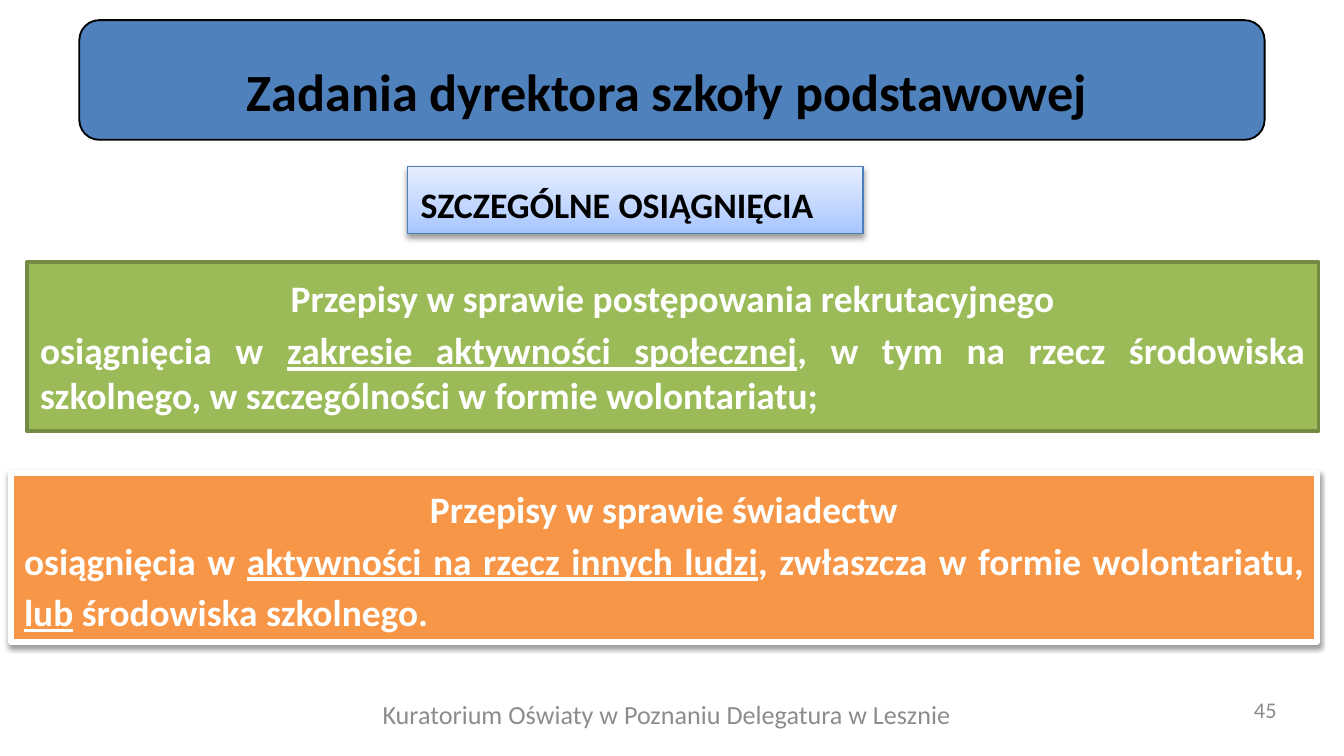
from dataclasses import dataclass

from lxml.etree import SubElement as Sub
from pptx import Presentation
from pptx.dml.color import RGBColor as Rgb
from pptx.enum.shapes import MSO_SHAPE as Form
from pptx.enum.text import MSO_ANCHOR as Anchor, PP_ALIGN as Align
from pptx.oxml.ns import qn
from pptx.util import Pt


@dataclass(frozen=True)
class Theme:
    font: str = "Calibri"
    black: str = "000000"
    white: str = "FFFFFF"
    gray: str = "8C8C8C"
    blue: str = "4F81BD"
    edge: str = "4B7EBC"
    green: str = "9BBB59"
    olive: str = "738A42"
    orange: str = "F79646"
    fade: tuple = ((0, "A4C4FF"), (35, "BFD4FF"), (100, "E6EEFF"))
    title: int = 28
    label: int = 24
    body: int = 20
    foot: int = 14
    page: int = 12


def apply(target, values):
    for name, value in values.items():
        setattr(target, name, value)


class Deck:
    def __init__(self, theme, width, height):
        self.theme = theme
        self.file = Presentation()
        apply(self.file, {"slide_width": Pt(width), "slide_height": Pt(height)})
        self.slide = self.file.slides.add_slide(self.file.slide_layouts[6])

    def box(self, area, fill, line, weight, form=Form.RECTANGLE, shade=False):
        shape = self.slide.shapes.add_shape(form, *map(Pt, area))
        shape.shadow.inherit = False
        if isinstance(fill, tuple):
            self.fade(shape, fill)
        else:
            shape.fill.solid()
            shape.fill.fore_color.rgb = Rgb.from_string(fill)
        shape.line.color.rgb = Rgb.from_string(line)
        shape.line.width = Pt(weight)
        if shade:
            self.shade(shape)
        return shape

    def fade(self, shape, stops):
        shape.fill.gradient()
        shape.fill.gradient_angle = 90
        group = shape._element.spPr.find(qn("a:gradFill")).find(qn("a:gsLst"))
        for stop in list(group):
            group.remove(stop)
        for place, color in stops:
            stop = Sub(group, qn("a:gs"), pos=str(place * 1000))
            Sub(stop, qn("a:srgbClr"), val=color)

    def shade(self, shape):
        effect = shape._element.spPr.find(qn("a:effectLst"))
        cast = Sub(effect, qn("a:outerShdw"), blurRad=str(Pt(3.1)),
                   dist=str(Pt(1.6)), dir="5400000", rotWithShape="0")
        color = Sub(cast, qn("a:srgbClr"), val=self.theme.black)
        Sub(color, qn("a:alpha"), val="38000")

    def text(self, area, *lines, **style):
        shape = self.slide.shapes.add_textbox(*map(Pt, area))
        self.label(shape, *lines, **style)

    def label(self, shape, *lines, size, color, bold=False, small=False,
              anchor=Anchor.TOP):
        frame = shape.text_frame
        apply(frame, {"word_wrap": True, "vertical_anchor": anchor})
        look = {"name": self.theme.font, "size": Pt(size), "bold": bold}
        for index, (runs, form) in enumerate(lines):
            para = frame.add_paragraph() if index else frame.paragraphs[0]
            apply(para, form)
            for order, words in enumerate(runs):
                run = para.add_run()
                run.text = words
                apply(run.font, look | {"underline": order % 2 == 1})
                run.font.color.rgb = Rgb.from_string(color)
                if small:
                    run.font._element.set("cap", "small")


def main():
    theme = Theme()
    deck = Deck(theme, 720, 405)
    mid = {"alignment": Align.CENTER}
    full = {"alignment": Align.JUSTIFY}
    wide = {"line_spacing": 1.15}
    gap = {"space_before": Pt(4)}
    strong = {"size": theme.body, "color": theme.white, "bold": True}
    faint = {"color": theme.gray, "anchor": Anchor.MIDDLE}

    rules = deck.box((14.4, 140.4, 691.9, 90.7), theme.green, theme.olive, 2)
    deck.label(
        rules,
        (["Przepisy w sprawie postępowania rekrutacyjnego"], mid | wide | gap),
        (["osiągnięcia w ", "zakresie aktywności społecznej",
          ", w tym na rzecz środowiska szkolnego, w szczególności w formie wolontariatu;"],
         full | gap),
        **strong)

    deck.text((178.6, 368.6, 357.1, 27.4),
              (["Kuratorium Oświaty w Poznaniu Delegatura w Lesznie"], mid),
              size=theme.foot, **faint)
    deck.text((649.4, 368.6, 56.9, 23), (["45"], mid), size=theme.page, **faint)

    deck.box((42.5, 10.8, 635, 64.1), theme.blue, theme.black, 1,
             Form.ROUNDED_RECTANGLE)
    deck.text((59.8, 28.1, 601.2, 41),
              (["Zadania dyrektora szkoły podstawowej "], mid),
              size=theme.title, color=theme.black, bold=True)

    award = deck.box((5.8, 253.4, 699.8, 90.7), theme.orange, theme.white, 3,
                     shade=True)
    deck.label(
        award,
        (["Przepisy w sprawie świadectw"], mid | wide),
        (["osiągnięcia w ", "aktywności na rzecz innych ludzi",
          ", zwłaszcza w formie wolontariatu, ", "lub", " środowiska szkolnego."],
         full | wide),
        **strong)

    badge = deck.box((218.2, 89.3, 244.1, 36), theme.fade, theme.edge, 0.75,
                     shade=True)
    deck.label(badge, (["szczególne osiągnięcia"], {"alignment": Align.LEFT}),
               size=theme.label, color=theme.black, bold=True, small=True)

    deck.file.save("out.pptx")


if __name__ == "__main__":
    main()
